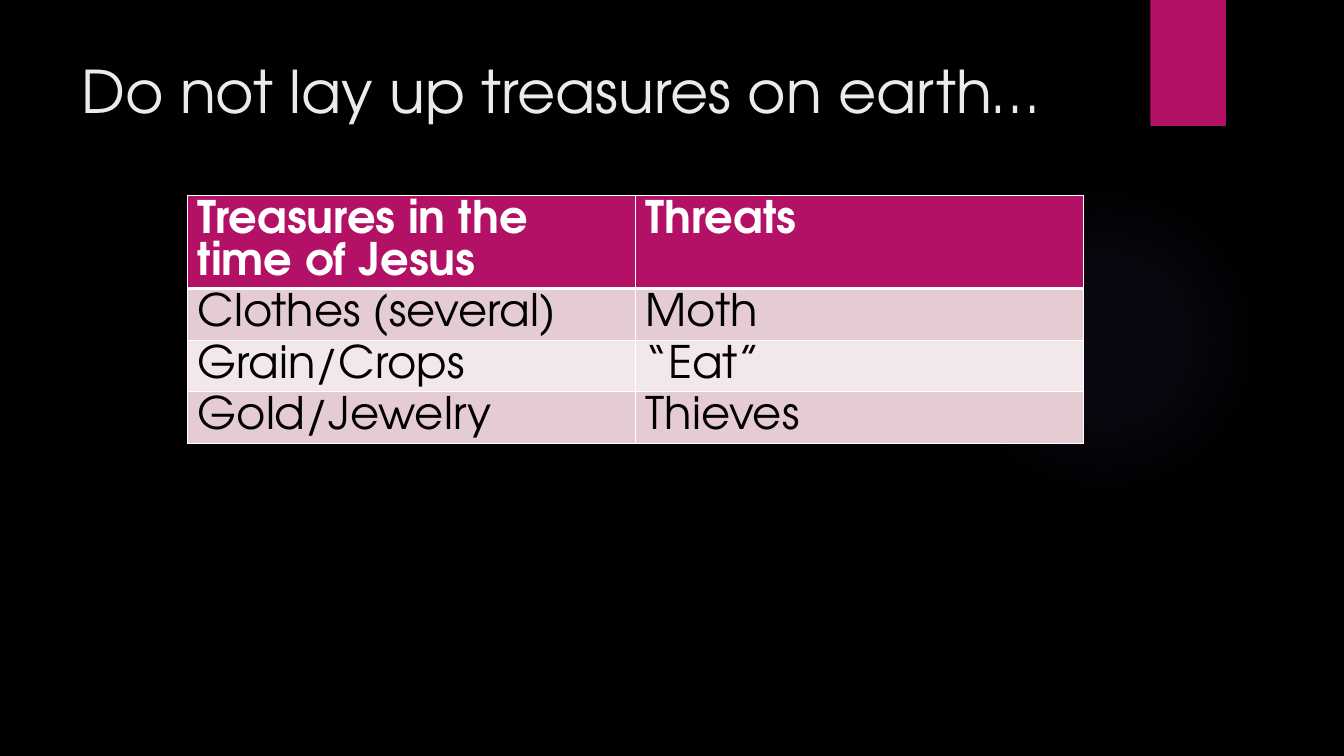
"""Build a slide with a table of earthly treasures and their threats."""
from dataclasses import dataclass

from lxml import etree
from pptx import Presentation
from pptx.dml.color import RGBColor
from pptx.enum.shapes import MSO_SHAPE
from pptx.enum.text import MSO_ANCHOR
from pptx.oxml import parse_xml
from pptx.oxml.ns import nsdecls, qn
from pptx.util import Inches, Pt

ELLIPSE = MSO_SHAPE.OVAL
RECTANGLE = MSO_SHAPE.RECTANGLE
TOP = MSO_ANCHOR.TOP


@dataclass(frozen=True)
class Theme:
    font: str = "TeX Gyre Adventor"
    background: str = "000000"
    accent: str = "B31166"
    glow: str = "9B6BF2"
    title: str = "EBEBEB"
    header_text: str = "FFFFFF"
    body_text: str = "000000"
    border: str = "FFFFFF"
    bands: tuple = ("E5CCD3", "F2E7EA")
    title_size: int = 42
    table_size: int = 32
    table_line: float = 29.6


theme = Theme()


def style_text(paragraph, size, color, bold=False):
    paragraph.font.name = theme.font
    paragraph.font.size = Pt(size)
    paragraph.font.bold = bold
    paragraph.font.color.rgb = RGBColor.from_string(color)


presentation = Presentation()
presentation.slide_width = Inches(13.33)
presentation.slide_height = Inches(7.5)
slide = presentation.slides.add_slide(presentation.slide_layouts[6])
slide.background.fill.solid()
slide.background.fill.fore_color.rgb = RGBColor.from_string(theme.background)

glow = slide.shapes.add_shape(ELLIPSE, Inches(9.41), Inches(1.83), Inches(3.08), Inches(3.08))
glow.shadow.inherit = False
glow.line.fill.background()
stops = "".join(
    f'<a:gs pos="{position * 1000}"><a:srgbClr val="{theme.glow}">'
    f'<a:alpha val="{alpha * 1000}"/></a:srgbClr></a:gs>'
    for position, alpha in ((0, 7), (36, 6), (69, 0), (100, 0))
)
gradient = parse_xml(
    f'<a:gradFill {nsdecls("a")}><a:gsLst>{stops}</a:gsLst><a:path path="circle">'
    '<a:fillToRect l="50000" t="50000" r="50000" b="50000"/></a:path></a:gradFill>'
)
glow.element.spPr.find(qn("a:prstGeom")).addnext(gradient)

ribbon = slide.shapes.add_shape(RECTANGLE, Inches(11.41), 0, Inches(0.75), Inches(1.25))
ribbon.shadow.inherit = False
ribbon.fill.solid()
ribbon.fill.fore_color.rgb = RGBColor.from_string(theme.accent)
ribbon.line.fill.background()
effects = ribbon.element.spPr.find(qn("a:effectLst"))
effects.append(parse_xml(
    f'<a:outerShdw {nsdecls("a")} blurRad="{Pt(3)}" dist="{Pt(2)}" dir="5400000">'
    '<a:srgbClr val="000000"><a:alpha val="45000"/></a:srgbClr></a:outerShdw>'
))

title = slide.shapes.add_textbox(Inches(0.71), Inches(0.49), Inches(10.29), Inches(1.53))
title.text_frame.word_wrap = True
title.text_frame.vertical_anchor = TOP
title.text_frame.text = "Do not lay up treasures on earth…"
style_text(title.text_frame.paragraphs[0], theme.title_size, theme.title)

rows = [
    ("Treasures in the time of Jesus", "Threats"),
    ("Clothes (several)", "Moth"),
    ("Grain/Crops", "“Eat”"),
    ("Gold/Jewelry", "Thieves"),
]
table = slide.shapes.add_table(
    len(rows), 2, Inches(1.86), Inches(1.94), Inches(8.89), Inches(1.64)
).table
for row_index, texts in enumerate(rows):
    is_header = row_index == 0
    fill = theme.accent if is_header else theme.bands[(row_index - 1) % 2]
    color = theme.header_text if is_header else theme.body_text
    widths = {"lnL": 1, "lnR": 1, "lnT": 3 if row_index == 1 else 1, "lnB": 3 if is_header else 1}
    for column_index, text in enumerate(texts):
        cell = table.cell(row_index, column_index)
        cell.text = text
        paragraph = cell.text_frame.paragraphs[0]
        paragraph.line_spacing = Pt(theme.table_line)
        style_text(paragraph, theme.table_size, color, is_header)
        cell.fill.solid()
        cell.fill.fore_color.rgb = RGBColor.from_string(fill)
        properties = cell.fill._xPr
        for index, (side, width) in enumerate(widths.items()):
            border = etree.Element(qn(f"a:{side}"), w=str(Pt(width)))
            solid = etree.SubElement(border, qn("a:solidFill"))
            etree.SubElement(solid, qn("a:srgbClr"), val=theme.border)
            properties.insert(index, border)

presentation.save("out.pptx")
